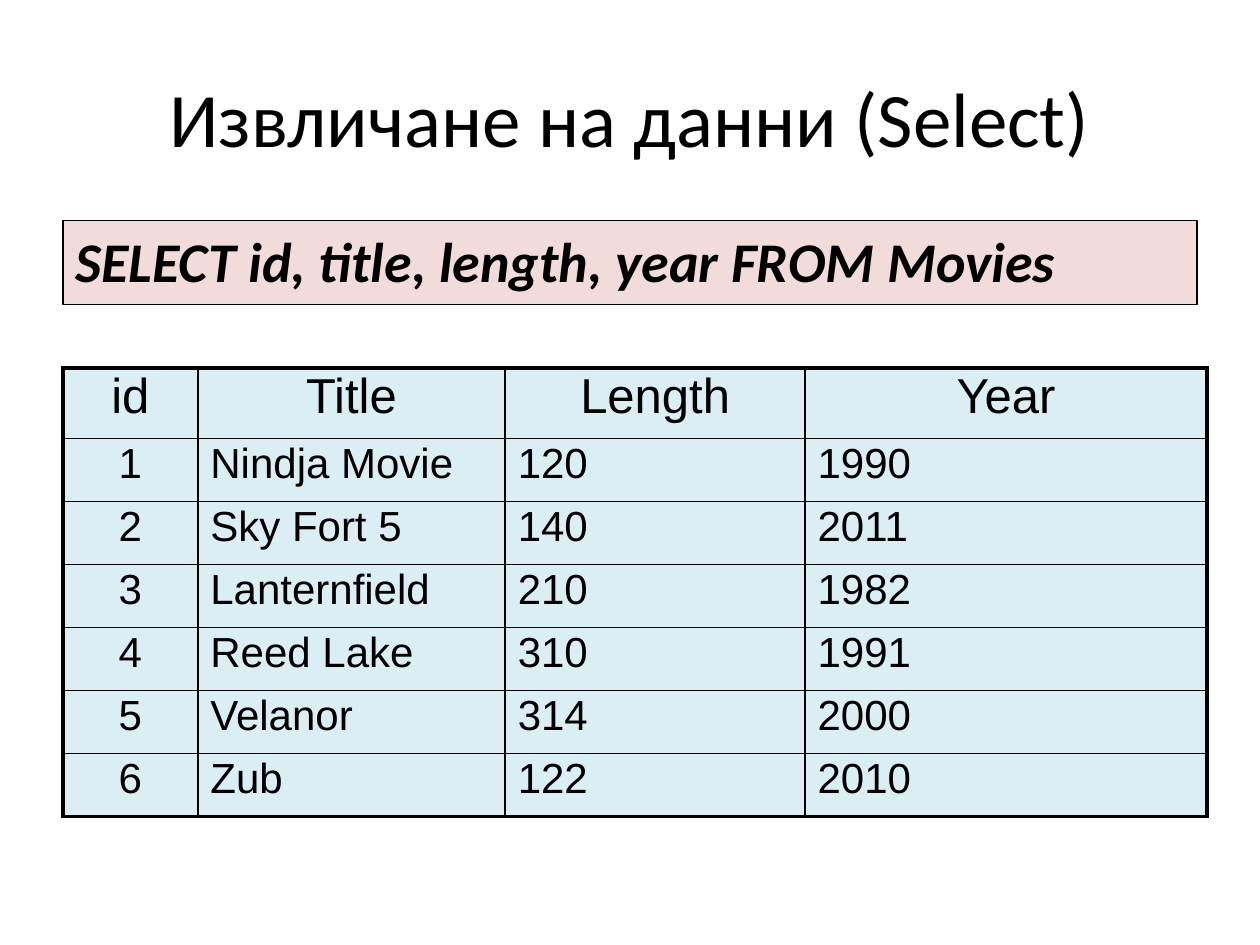
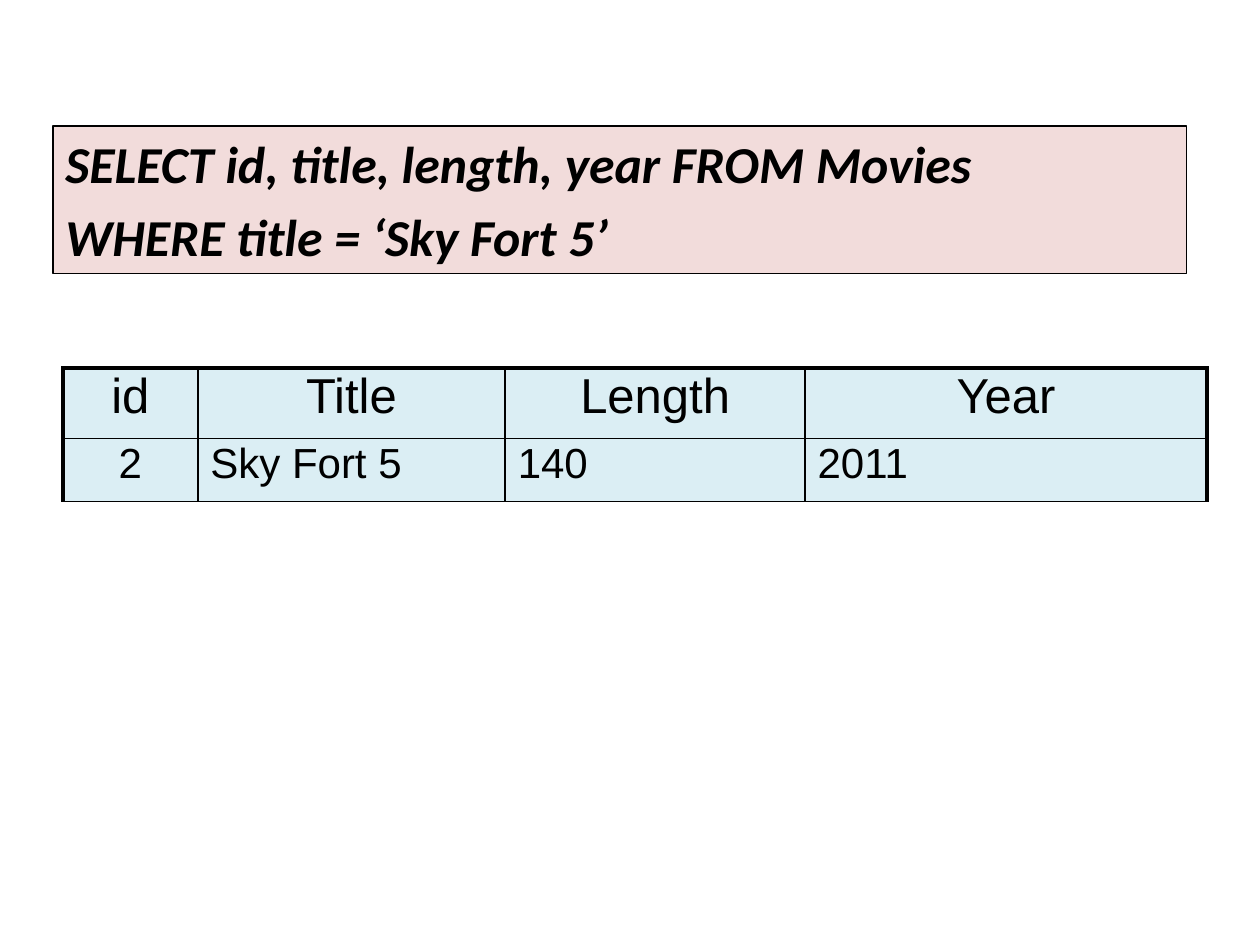
from dataclasses import dataclass

from lxml import etree
from pptx import Presentation
from pptx.dml.color import RGBColor
from pptx.enum.shapes import MSO_SHAPE
from pptx.enum.text import MSO_ANCHOR, PP_ALIGN
from pptx.oxml.ns import qn
from pptx.slide import Slide
from pptx.table import _Cell
from pptx.util import Inches, Pt

RECTANGLE = MSO_SHAPE.RECTANGLE
LEFT, CENTER = PP_ALIGN.LEFT, PP_ALIGN.CENTER
TOP, MIDDLE = MSO_ANCHOR.TOP, MSO_ANCHOR.MIDDLE

BLACK = RGBColor(0x00, 0x00, 0x00)
QUERY_FILL = RGBColor(0xF2, 0xDC, 0xDB)
CELL_FILL = RGBColor(0xDB, 0xEE, 0xF4)
TEXT_FONT, TABLE_FONT = "Calibri", "Arial"

SLIDE_WIDTH, SLIDE_HEIGHT = Inches(10), Inches(7.5)
COLUMN, ROW = SLIDE_WIDTH // 100, SLIDE_HEIGHT // 75
HANGING_INDENT = Inches(0.38)
THIN, THICK = Pt(1), Pt(2.25)

TABLE_LEFT, TABLE_TOP = 5, 29.2
TABLE_COLUMNS = (10.7, 24.4, 23.8, 31.9)
HEADER_ROWS, RECORD_ROWS = 5.6, 5
HEADER = ("id", "Title", "Length", "Year")
MOVIES = (
    ("1", "Nindja Movie", "120", "1990"),
    ("2", "Sky Fort 5", "140", "2011"),
    ("3", "Lanternfield", "210", "1982"),
    ("4", "Reed Lake", "310", "1991"),
    ("5", "Velanor", "314", "2000"),
    ("6", "Zub", "122", "2010"),
)
SELECT_LINE = "SELECT id, title, length, year FROM Movies"


@dataclass(frozen=True)
class Area:
    left: float
    top: float
    columns: float
    rows: float

    def frame(self) -> tuple[int, int, int, int]:
        return (round(self.left * COLUMN), round(self.top * ROW),
                round(self.columns * COLUMN), round(self.rows * ROW))


@dataclass(frozen=True)
class TextStyle:
    font: str
    size: float
    align: PP_ALIGN = LEFT
    emphasis: bool = False
    space_before: int = 0
    line_spacing: float = 1.0


@dataclass(frozen=True)
class Query:
    area: Area
    size: float
    lines: tuple[str, ...]


def style_paragraph(paragraph, style: TextStyle) -> None:
    paragraph.alignment = style.align
    paragraph.line_spacing = style.line_spacing
    paragraph.space_before = Pt(0)
    spacing = paragraph._p.pPr.find(qn("a:spcBef"))
    spacing.clear()
    etree.SubElement(spacing, qn("a:spcPct"), val=str(style.space_before * 1000))
    for span in paragraph.runs:
        span.font.name = style.font
        span.font.size = Pt(style.size)
        span.font.bold = span.font.italic = style.emphasis
        span.font.color.rgb = BLACK


def add_title(page: Slide, text: str) -> None:
    box = page.shapes.add_textbox(*Area(5, 3, 90, 12.5).frame())
    box.text_frame.word_wrap = True
    box.text_frame.vertical_anchor = MIDDLE
    box.text_frame.text = text
    style_paragraph(box.text_frame.paragraphs[0], TextStyle(TEXT_FONT, 44, CENTER))


def add_query(page: Slide, query: Query) -> None:
    box = page.shapes.add_shape(RECTANGLE, *query.area.frame())
    box.shadow.inherit = False
    box.fill.solid()
    box.fill.fore_color.rgb = QUERY_FILL
    box.line.color.rgb = BLACK
    box.line.width = Pt(0.75)
    box.text_frame.word_wrap = True
    box.text_frame.vertical_anchor = TOP
    box.text_frame.text = "\n".join(query.lines)
    style = TextStyle(TEXT_FONT, query.size, emphasis=True, space_before=20)
    for paragraph in box.text_frame.paragraphs:
        style_paragraph(paragraph, style)
        properties = paragraph._p.get_or_add_pPr()
        properties.set("marL", str(HANGING_INDENT))
        properties.set("indent", str(-HANGING_INDENT))


def draw_borders(cell: _Cell, widths: dict[str, int]) -> None:
    properties = cell._tc.get_or_add_tcPr()
    for side, width in widths.items():
        line = etree.SubElement(properties, qn(f"a:ln{side}"), w=str(width))
        fill = etree.SubElement(line, qn("a:solidFill"))
        etree.SubElement(fill, qn("a:srgbClr"), val=str(BLACK))


def add_result(page: Slide, movies: tuple[tuple[str, ...], ...], bottom: int) -> None:
    records = (HEADER, *movies)
    heights = (HEADER_ROWS, *[RECORD_ROWS] * len(movies))
    area = Area(TABLE_LEFT, TABLE_TOP, sum(TABLE_COLUMNS), sum(heights))
    table = page.shapes.add_table(len(records), len(HEADER), *area.frame()).table
    table.first_row = table.horz_banding = False
    for column, width in zip(table.columns, TABLE_COLUMNS):
        column.width = round(width * COLUMN)
    last_row, last_column = len(records) - 1, len(HEADER) - 1
    for r, record in enumerate(records):
        table.rows[r].height = round(heights[r] * ROW)
        for c, value in enumerate(record):
            cell = table.cell(r, c)
            draw_borders(cell, {
                "L": THICK if c == 0 else THIN,
                "R": THICK if c == last_column else THIN,
                "T": THICK if r == 0 else THIN,
                "B": bottom if r == last_row else THIN,
            })
            cell.fill.solid()
            cell.fill.fore_color.rgb = CELL_FILL
            cell.text_frame.text = value
            style_paragraph(cell.text_frame.paragraphs[0], TextStyle(
                TABLE_FONT, 28 if r == 0 else 24, CENTER if r == 0 or c == 0 else LEFT,
                space_before=30, line_spacing=0.9))


def main() -> None:
    deck = Presentation()
    deck.slide_width, deck.slide_height = SLIDE_WIDTH, SLIDE_HEIGHT
    blank = deck.slide_layouts[6]

    page = deck.slides.add_slide(blank)
    add_title(page, "Извличане на данни (Select)")
    add_query(page, Query(Area(5, 17.5, 90, 6.7), 32, (SELECT_LINE,)))
    add_result(page, MOVIES, THICK)

    page = deck.slides.add_slide(blank)
    add_query(page, Query(Area(4.2, 10, 90, 11.7), 29.6,
                          (SELECT_LINE, "WHERE title = ‘Sky Fort 5’")))
    add_result(page, MOVIES[1:2], THIN)

    deck.save("out.pptx")


if __name__ == "__main__":
    main()
